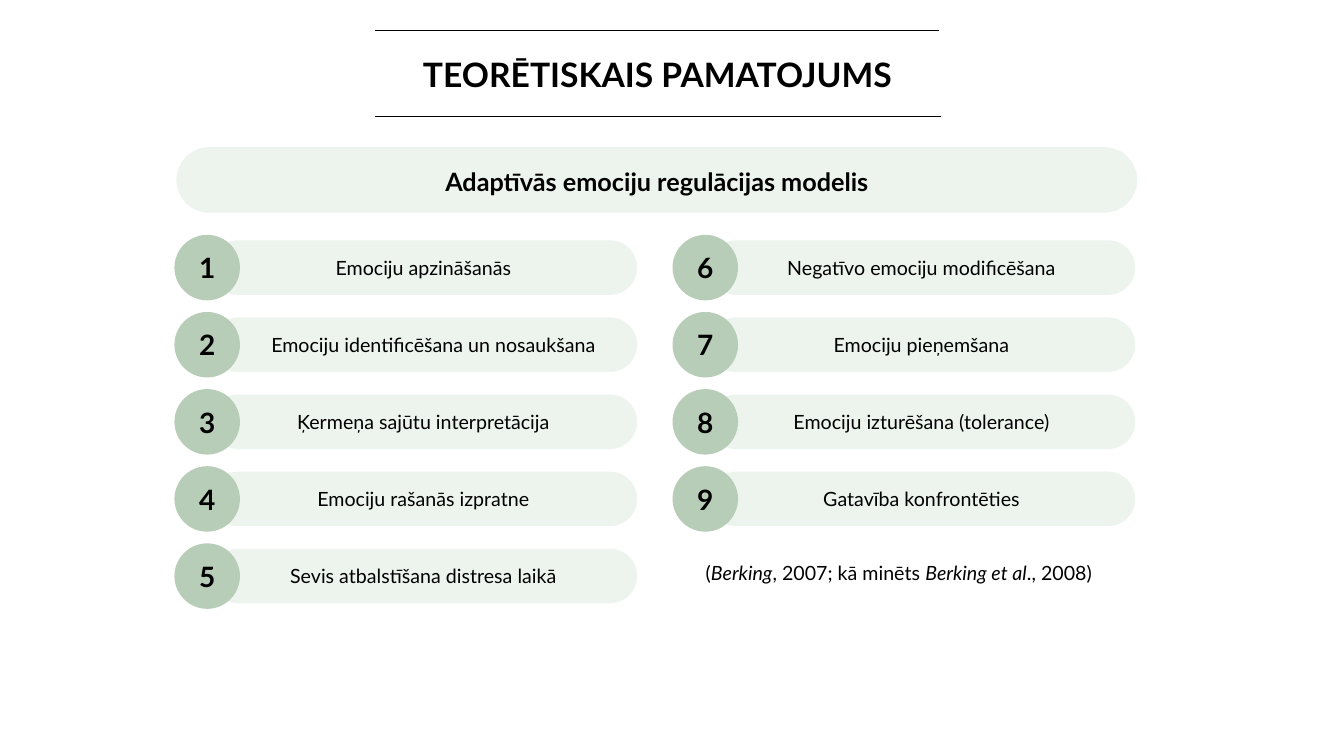
from pptx import Presentation
from pptx.dml.color import RGBColor
from pptx.enum.shapes import MSO_CONNECTOR as Connector, MSO_SHAPE as Preset
from pptx.enum.text import MSO_ANCHOR as Anchor, MSO_AUTO_SIZE as AutoSize, PP_ALIGN as Align
from pptx.oxml.ns import qn
from pptx.util import Inches, Pt
from lxml.etree import SubElement

COLORS = {"text": "000000", "pill": "EDF3ED", "badge": "B7CDB7"}
FONT = "Lato"
COLUMN_LEFTS = (1.73, 6.67)
ROW_TOP, ROW_PITCH = 2.33, 0.765
BADGE = 0.65
PILL_WIDTH, PILL_HEIGHT, PILL_INDENT = 4.23, 0.54, 0.36
LABEL_WIDTH, LABEL_HEIGHT, LABEL_INDENT = 4.14, 0.34, 0.4
LABEL_SHIFTS = {2: 0.1}
STRATEGIES = (
    ("Emociju apzināšanās", "Emociju identificēšana un nosaukšana",
     "Ķermeņa sajūtu interpretācija", "Emociju rašanās izpratne",
     "Sevis atbalstīšana distresa laikā"),
    ("Negatīvo emociju modificēšana", "Emociju pieņemšana",
     "Emociju izturēšana (tolerance)", "Gatavība konfrontēties"),
)
CITATION = (("(", False), ("Berking", True), (", 2007; kā minēts ", False),
            ("Berking et al", True), ("., 2008)", False))


def color(key):
    """Return the palette colour for a key."""
    return RGBColor.from_string(COLORS[key])


def write(frame, runs, size, bold=False, spacing=None):
    """Write one centred paragraph from (text, italic) pairs."""
    paragraph = frame.paragraphs[0]
    paragraph.alignment = Align.CENTER
    if spacing:
        paragraph.line_spacing = spacing
    for text, italic in runs:
        run = paragraph.add_run()
        run.text = text
        run.font.name, run.font.size = FONT, Pt(size)
        run.font.bold, run.font.italic = bold, italic
        run.font.color.rgb = color("text")


def add_title(slide, text):
    """Place and fill the title placeholder."""
    title = slide.shapes.title
    title.left, title.top, title.width, title.height = map(Inches, (3.17, 0.58, 6.7, 0.5))
    frame = title.text_frame
    frame.auto_size = AutoSize.NONE
    frame.word_wrap = True
    frame.vertical_anchor = Anchor.TOP
    frame.margin_left = frame.margin_right = frame.margin_top = frame.margin_bottom = 0
    write(frame, [(text, False)], 24, True, 0.9)


def add_rule(slide, left, right, top):
    """Draw a thin horizontal rule."""
    rule = slide.shapes.add_connector(
        Connector.STRAIGHT, *map(Inches, (left, top, right, top)))
    rule.line.color.rgb = color("text")
    rule.line.width = Pt(0.5)
    SubElement(rule.element.spPr, qn("a:effectLst"))


def add_filled(slide, preset, box, fill):
    """Add a flat filled shape without outline."""
    filled = slide.shapes.add_shape(preset, *map(Inches, box))
    filled.shadow.inherit = False
    filled.fill.solid()
    filled.fill.fore_color.rgb = color(fill)
    filled.line.fill.background()
    return filled


def add_pill(slide, box):
    """Add a pale bar with fully rounded ends."""
    add_filled(slide, Preset.ROUNDED_RECTANGLE, box, "pill").adjustments[0] = 0.5


def add_label(slide, box, runs, size, bold=False, spacing=None):
    """Add a centred text box."""
    frame = slide.shapes.add_textbox(*map(Inches, box)).text_frame
    frame.word_wrap = True
    write(frame, runs, size, bold, spacing)


def add_strategy(slide, number, text, left, top):
    """Add a numbered strategy: bar, label and badge."""
    middle = top + BADGE / 2
    add_pill(slide, (left + PILL_INDENT, middle - PILL_HEIGHT / 2, PILL_WIDTH, PILL_HEIGHT))
    label_left = left + LABEL_INDENT + LABEL_SHIFTS.get(number, 0)
    add_label(slide, (label_left, middle - LABEL_HEIGHT / 2, LABEL_WIDTH, LABEL_HEIGHT),
              [(text, False)], 14)
    badge = add_filled(slide, Preset.OVAL, (left, top, BADGE, BADGE), "badge")
    badge.text_frame.vertical_anchor = Anchor.MIDDLE
    write(badge.text_frame, [(str(number), False)], 20, True)


def main():
    """Build and save the slide."""
    deck = Presentation()
    deck.slide_width, deck.slide_height = Inches(13.33), Inches(7.5)
    slide = deck.slides.add_slide(deck.slide_layouts[5])
    add_title(slide, "TEORĒTISKAIS PAMATOJUMS")
    add_rule(slide, 3.72, 9.31, 0.3)
    add_rule(slide, 3.72, 9.33, 1.15)
    add_pill(slide, (1.75, 1.46, 9.53, 0.65))
    add_label(slide, (2.18, 1.66, 8.67, 0.36),
              [("Adaptīvās emociju regulācijas modelis", False)], 18, True, 0.8)
    number = 0
    for left, column in zip(COLUMN_LEFTS, STRATEGIES):
        for row, text in enumerate(column):
            number += 1
            add_strategy(slide, number, text, left, ROW_TOP + row * ROW_PITCH)
    add_label(slide, (6.25, 5.52, 5.33, LABEL_HEIGHT), CITATION, 14)
    deck.save("out.pptx")


if __name__ == "__main__":
    main()
